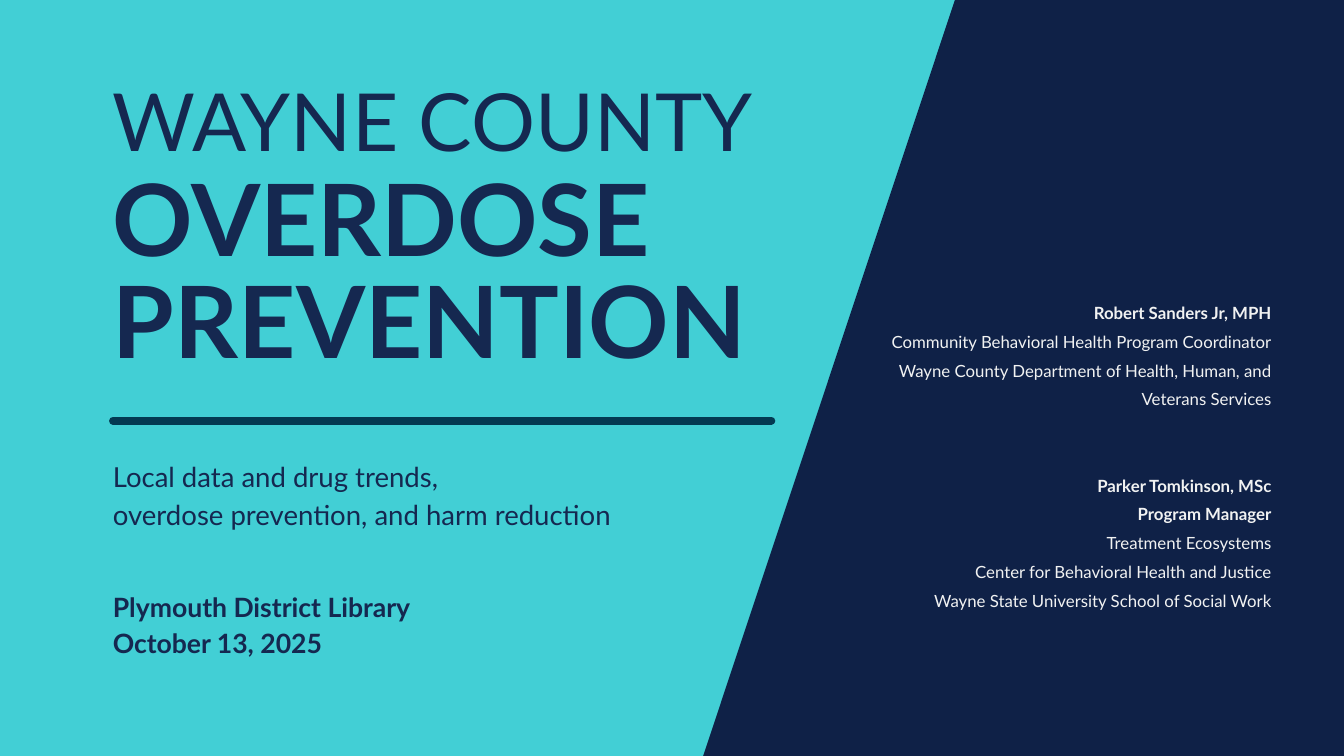
"""Build the Wayne County overdose prevention title slide."""
import lxml.etree
import pptx
import pptx.dml.color
import pptx.enum.shapes
import pptx.enum.text
import pptx.oxml.ns
import pptx.util
from pptx.util import Inches

NAVY, DEEP, TEAL, RULE, PALE = "152850", "0F2147", "42CFD5", "033A52", "F1F2F2"
LEFT = pptx.enum.text.PP_ALIGN.LEFT
RIGHT = pptx.enum.text.PP_ALIGN.RIGHT


def rgb(value):
    return pptx.dml.color.RGBColor.from_string(value)


def add_text(s, box, lines, color, align=LEFT):
    tf = s.shapes.add_textbox(*[Inches(v) for v in box]).text_frame
    tf.word_wrap = True
    tf.margin_left = tf.margin_right = tf.margin_top = tf.margin_bottom = 0
    for i, (text, size, bold, spacing, before) in enumerate(lines):
        p = tf.paragraphs[0] if i == 0 else tf.add_paragraph()
        p.text = text
        p.alignment = align
        p.line_spacing = pptx.util.Pt(spacing)
        p.space_before = pptx.util.Pt(before)
        p.font.name = "Lato"
        p.font.size = pptx.util.Pt(size)
        p.font.bold = bold
        p.font.color.rgb = rgb(color)


prs = pptx.Presentation()
prs.slide_width, prs.slide_height = Inches(20), Inches(11.25)
s = prs.slides.add_slide(prs.slide_layouts[6])
s.background.fill.solid()
s.background.fill.fore_color.rgb = rgb(TEAL)

add_text(s, (1.68, 6.78, 16.64, 4.27), [
    ("Local data and drug trends,", 29.5, False, 40.4, 0),
    ("overdose prevention, and harm reduction", 29.5, False, 40.4, 0),
    ("Plymouth District Library", 28.5, True, 39, 58.9),
    ("October 13, 2025", 28.5, True, 39, 0),
], NAVY)

add_text(s, (1.68, 2.6, 11.15, 3.09), [
    (word, 106.8, True, 108.9, 0) for word in ("OVERDOSE", "PREVENTION")
], NAVY)

builder = s.shapes.build_freeform(Inches(14.21), 0)
builder.add_line_segments(
    [(Inches(x), Inches(y)) for x, y in ((27.9, 0), (23.34, 13.69), (9.65, 13.69))])
panel = builder.convert_to_shape()
panel.shadow.inherit = False
panel.fill.solid()
panel.fill.fore_color.rgb = rgb(DEEP)
panel.line.fill.background()

rule = s.shapes.add_connector(
    pptx.enum.shapes.MSO_CONNECTOR.STRAIGHT,
    Inches(1.68), Inches(6.26), Inches(11.48), Inches(6.26))
rule.line.color.rgb = rgb(RULE)
rule.line.width = pptx.util.Pt(8.25)
rule.line._get_or_add_ln().set("cap", "rnd")
lxml.etree.SubElement(rule._element.spPr, pptx.oxml.ns.qn("a:effectLst"))

speakers = [
    ("Robert Sanders Jr, MPH", True, 0),
    ("Community Behavioral Health Program Coordinator", False, 0),
    ("Wayne County Department of Health, Human, and Veterans Services", False, 0),
    ("Parker Tomkinson, MSc", True, 61.6),
    ("Program Manager", True, 0),
    ("Treatment Ecosystems", False, 0),
    ("Center for Behavioral Health and Justice", False, 0),
    ("Wayne State University School of Social Work", False, 0),
]
add_text(s, (12.68, 4.38, 6.24, 6.5), [
    (text, 18, bold, 30.8, before) for text, bold, before in speakers
], PALE, RIGHT)

add_text(s, (1.68, 1.28, 14.39, 1.27),
         [("WAYNE COUNTY", 85.8, False, 87.5, 0)], NAVY)

prs.save("out.pptx")
